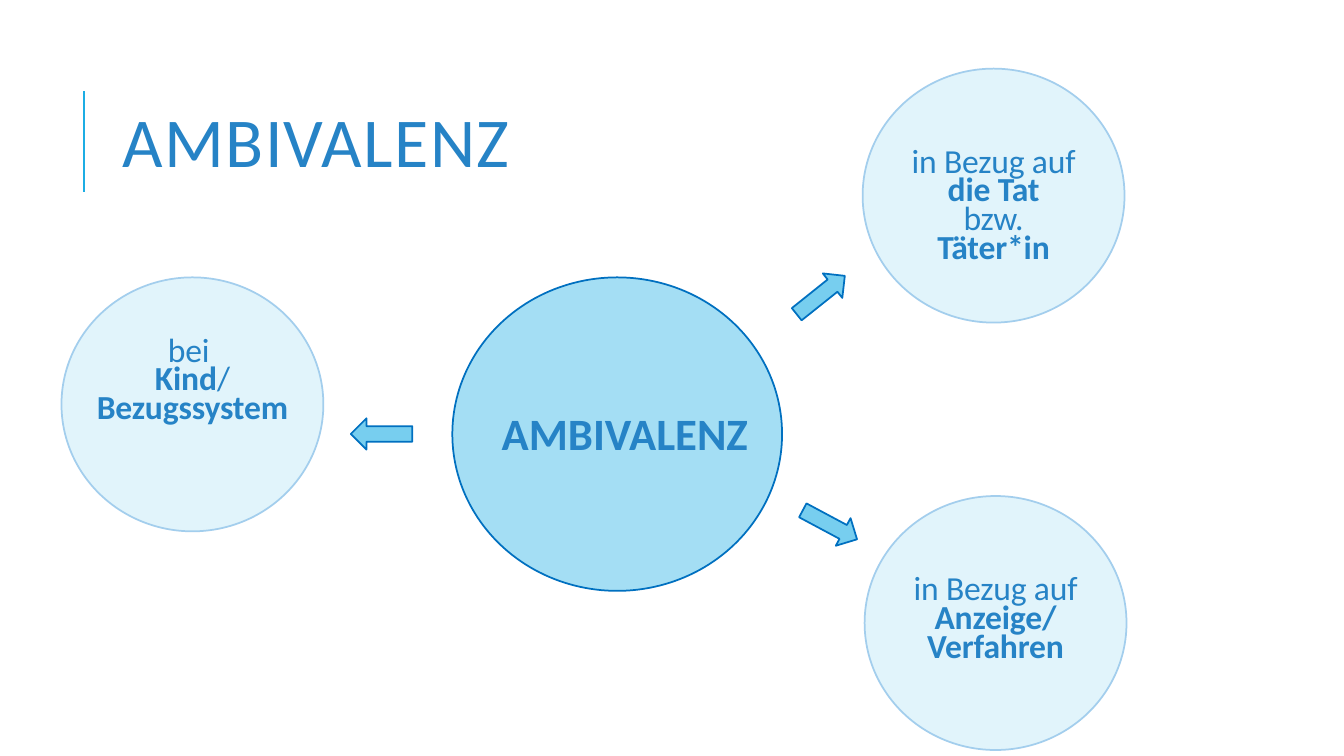
from pptx import Presentation
from pptx.dml.color import RGBColor
from pptx.enum.shapes import MSO_CONNECTOR, MSO_SHAPE
from pptx.enum.text import MSO_ANCHOR, PP_ALIGN
from pptx.oxml.ns import qn
from pptx.util import Cm, Pt
from lxml.etree import SubElement

# Content: each line is a list of (text, bold) runs
TITLE = [[("AMBIVALENZ", False)]]
CORE = [[("AMBIVALENZ", True)]]
# left, top, distance from circle top to text, lines
TOPICS = [
    (21.74, 1.73, 1.95, [[("in Bezug auf", False)], [("die Tat", True)],
                         [("bzw.", False)], [("Täter*in", True)]]),
    (1.55, 6.99, 1.45, [[("bei ", False)], [("Kind", True), ("/", False)],
                        [("Bezugssystem", True)]]),
    (21.79, 12.5, 1.95, [[("in Bezug auf", False)], [("Anzeige/", True)],
                         [("Verfahren", True)]]),
]
# left, top, rotation
ARROWS = [(20.14, 12.83, 28.1), (8.84, 10.54, 180), (19.91, 7.04, 321.4)]

THEME = {
    "font": "Calibri", "text": "2683C6", "rule": "1CADE4",
    "disc": "A4DEF4", "edge": "0070C0", "rim": "A3CEED", "arrow": "77CEEF",
    "title": 50, "core": 32, "topic": 24, "lead": 20.6, "line": 1.25,
}
WIDE, HIGH = 6.6, 6.4      # topic circle
BOX = 5.79                 # width of topic text

deck = Presentation()
deck.slide_width, deck.slide_height = Cm(33.87), Cm(19.05)
slide = deck.slides.add_slide(deck.slide_layouts[6])


def color(key):
    return RGBColor.from_string(THEME[key])


def draw(kind, left, top, wide, high, fill, edge, alpha=None):
    shape = slide.shapes.add_shape(kind, Cm(left), Cm(top), Cm(wide), Cm(high))
    shape.shadow.inherit = False
    shape.fill.solid()
    shape.fill.fore_color.rgb = color(fill)
    shape.line.color.rgb = color(edge)
    shape.line.width = Pt(THEME["line"])
    if alpha:
        tone = shape.fill._xPr.find(qn("a:solidFill"))[0]
        SubElement(tone, qn("a:alpha")).set("val", str(alpha * 1000))
    return shape


def write(lines, left, top, wide, high, size, lead=None, track=0,
          align=PP_ALIGN.CENTER, anchor=MSO_ANCHOR.TOP):
    box = slide.shapes.add_textbox(Cm(left), Cm(top), Cm(wide), Cm(high))
    frame = box.text_frame
    frame.word_wrap = True
    frame.vertical_anchor = anchor
    for row, parts in enumerate(lines):
        para = frame.paragraphs[0] if row == 0 else frame.add_paragraph()
        para.alignment = align
        para.line_spacing = lead
        para.font.name = THEME["font"]
        para.font.size = Pt(THEME[size])
        para.font.color.rgb = color("text")
        for text, bold in parts:
            run = para.add_run()
            run.text = text
            run.font.bold = bold
            if track:
                run.font._rPr.set("spc", str(track))


# Title with its rule
rule = slide.shapes.add_connector(
    MSO_CONNECTOR.STRAIGHT, Cm(2.12), Cm(4.83), Cm(2.12), Cm(2.29))
rule.line.color.rgb = color("rule")
rule.line.width = Pt(1.5)
SubElement(rule._element.spPr, qn("a:effectLst"))
write(TITLE, 2.84, 1.63, 27, 4.17, "title", 0.8, 100,
      PP_ALIGN.LEFT, MSO_ANCHOR.MIDDLE)

# Central circle
draw(MSO_SHAPE.OVAL, 11.4, 6.99, 8.31, 7.9, "disc", "edge")
write(CORE, 11.95, 10.11, 7.6, 1.62, "core")

# Topic circles
for left, top, drop, lines in TOPICS:
    draw(MSO_SHAPE.OVAL, left, top, WIDE, HIGH, "disc", "rim", 33)
    high = 0.36 + 0.73 * len(lines)
    write(lines, left + (WIDE - BOX) / 2, top + drop, BOX, high,
          "topic", Pt(THEME["lead"]), -10)

# Arrows from the centre
for left, top, turn in ARROWS:
    arrow = draw(MSO_SHAPE.RIGHT_ARROW, left, top, 1.55, 0.79, "arrow", "edge")
    arrow.rotation = turn

deck.save("out.pptx")
